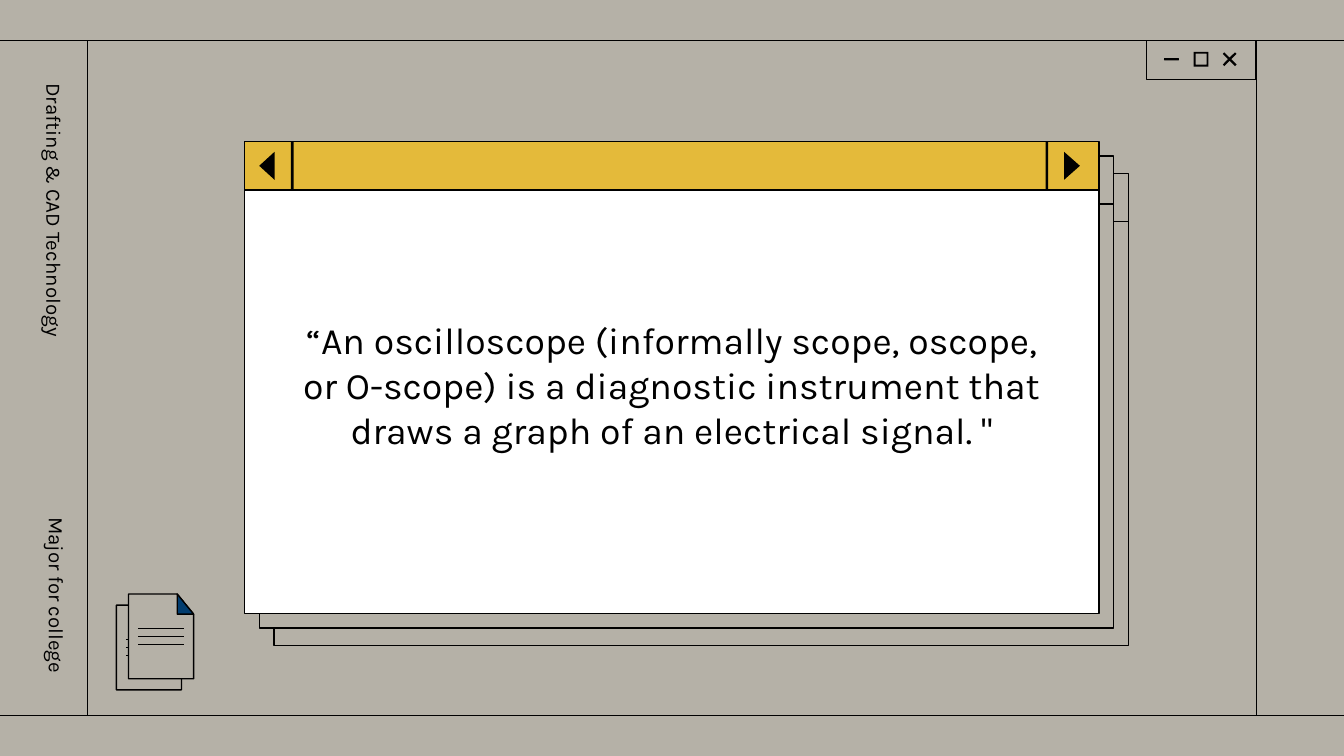
"""Build a quote slide framed like a retro desktop window."""
from lxml.etree import SubElement
from pptx import Presentation
from pptx.dml.color import RGBColor
from pptx.enum.shapes import MSO_CONNECTOR, MSO_SHAPE
from pptx.enum.text import MSO_ANCHOR, PP_ALIGN
from pptx.oxml.ns import qn
from pptx.util import Cm, Pt

COLORS = {"stone": "B5B1A7", "ink": "000000", "paper": "FFFFFF",
          "gold": "E4BA3A", "navy": "023D6F"}
FONT = "Karla"
LINE_WIDTH = Pt(0.75)
TOP, BOTTOM = 0.77, 13.53
WINDOW_WIDTH, BAR_HEIGHT, BODY_HEIGHT = 16.15, 0.91, 8.01


def color(name):
    return RGBColor.from_string(COLORS[name])


def paint(shape, fill, line):
    shape.shadow.inherit = False
    if fill:
        shape.fill.solid()
        shape.fill.fore_color.rgb = color(fill)
    else:
        shape.fill.background()
    if line:
        shape.line.color.rgb = color(line)
        shape.line.width = LINE_WIDTH
    else:
        shape.line.fill.background()


def add_preset(page, kind, left, top, width, height, fill, line=None):
    shape = page.shapes.add_shape(kind, Cm(left), Cm(top), Cm(width), Cm(height))
    paint(shape, fill, line)
    return shape


def add_box(page, left, top, width, height, fill, line=None):
    return add_preset(page, MSO_SHAPE.RECTANGLE, left, top, width, height, fill, line)


def add_polygon(page, points, fill, line=None):
    corners = [(Cm(x), Cm(y)) for x, y in points]
    builder = page.shapes.build_freeform(*corners[0])
    builder.add_line_segments(corners[1:], close=True)
    paint(builder.convert_to_shape(), fill, line)


def add_line(page, x1, y1, x2, y2):
    line = page.shapes.add_connector(MSO_CONNECTOR.STRAIGHT, Cm(x1), Cm(y1), Cm(x2), Cm(y2))
    line.line.color.rgb = color("ink")
    line.line.width = LINE_WIDTH
    properties = line._element.find(qn("p:spPr"))
    SubElement(properties, qn("a:effectLst"))


def add_text(page, left, top, width, height, text, size, align, rotation=0):
    box = page.shapes.add_textbox(Cm(left), Cm(top), Cm(width), Cm(height))
    box.rotation = rotation
    frame = box.text_frame
    frame.word_wrap = True
    frame.vertical_anchor = MSO_ANCHOR.MIDDLE
    frame.margin_left = frame.margin_right = Cm(0.25)
    frame.margin_top = frame.margin_bottom = Cm(0.25)
    para = frame.paragraphs[0]
    para.alignment = align
    span = para.add_run()
    span.text = text
    span.font.name = FONT
    span.font.size = Pt(size)
    span.font.color.rgb = color("ink")
    return para


def add_controls(page):
    add_box(page, 21.67, TOP, 2.07, 0.73, "stone", "ink")
    middle, arm, half = 1.12, 0.13, 0.03
    corner = [(0, -half), (arm - half, -arm), (arm, half - arm)]
    cross = []
    for _ in range(4):
        cross += [(23.24 + x, middle + y) for x, y in corner]
        corner = [(-y, x) for x, y in corner]
    add_polygon(page, cross, "ink")
    square = add_preset(page, MSO_SHAPE.FRAME, 22.56, middle - 0.14, 0.28, 0.28, "ink")
    square.adjustments[0] = 0.13
    add_preset(page, MSO_SHAPE.ROUNDED_RECTANGLE, 22, middle - 0.02, 0.28, 0.04, "ink")


def add_frame(page):
    add_line(page, -0.08, TOP, 25.48, TOP)
    add_line(page, 1.65, BOTTOM, 1.65, TOP)
    add_line(page, 23.75, BOTTOM, 23.75, TOP)
    add_line(page, -0.08, BOTTOM, 25.48, BOTTOM)


def add_window(page, left, top, body, bar, mark):
    add_box(page, left, top + BAR_HEIGHT, WINDOW_WIDTH, BODY_HEIGHT, body, "ink")
    add_box(page, left, top, WINDOW_WIDTH, BAR_HEIGHT, bar, "ink")
    if not mark:
        return
    for divider, base, tip in ((0.88, 0.57, 0.28), (15.14, 15.49, 15.79)):
        add_box(page, left + divider, top, 0.05, BAR_HEIGHT, mark)
        add_polygon(page, [(left + base, top + 0.19), (left + base, top + 0.72),
                           (left + tip, top + BAR_HEIGHT / 2)], mark)


def add_document(page, left, top, fold_fill):
    right, bottom = left + 1.23, top + 1.6
    fold_x, fold_y = right - 0.31, top + 0.38
    add_polygon(page, [(left, top), (left, bottom), (right, bottom),
                       (right, fold_y), (fold_x, top)], "stone", "ink")
    add_polygon(page, [(fold_x, top), (fold_x, fold_y), (right, fold_y)], fold_fill, "ink")
    for row in range(3):
        y = top + 0.65 + 0.15 * row
        add_line(page, left + 0.18, y, left + 1.05, y)


def main():
    deck = Presentation()
    deck.slide_width, deck.slide_height = Cm(25.4), Cm(14.29)
    page = deck.slides.add_slide(deck.slide_layouts[6])
    page.background.fill.solid()
    page.background.fill.fore_color.rgb = color("stone")

    add_controls(page)
    add_frame(page)
    add_window(page, 5.18, 3.28, None, None, None)
    add_window(page, 4.9, 2.95, "stone", "stone", "stone")
    add_window(page, 4.62, 2.68, "paper", "gold", "ink")

    add_text(page, 5.36, 4.4, 14.68, 5.74,
             "“An oscilloscope (informally scope, oscope, or O-scope) is a diagnostic "
             "instrument that draws a graph of an electrical signal. \"",
             20, PP_ALIGN.CENTER)
    course = add_text(page, -1.88, 3.99, 5.89, 0.56, "Drafting & CAD Technology",
                      11, PP_ALIGN.LEFT, 90)
    course.line_spacing = 1.15
    course.space_after = Pt(12)
    add_text(page, -1.55, 10.06, 5.26, 0.56, "Major for college", 11, PP_ALIGN.RIGHT, 90)

    add_document(page, 2.2, 11.44, "gold")
    add_document(page, 2.43, 11.23, "navy")
    deck.save("out.pptx")


if __name__ == "__main__":
    main()
